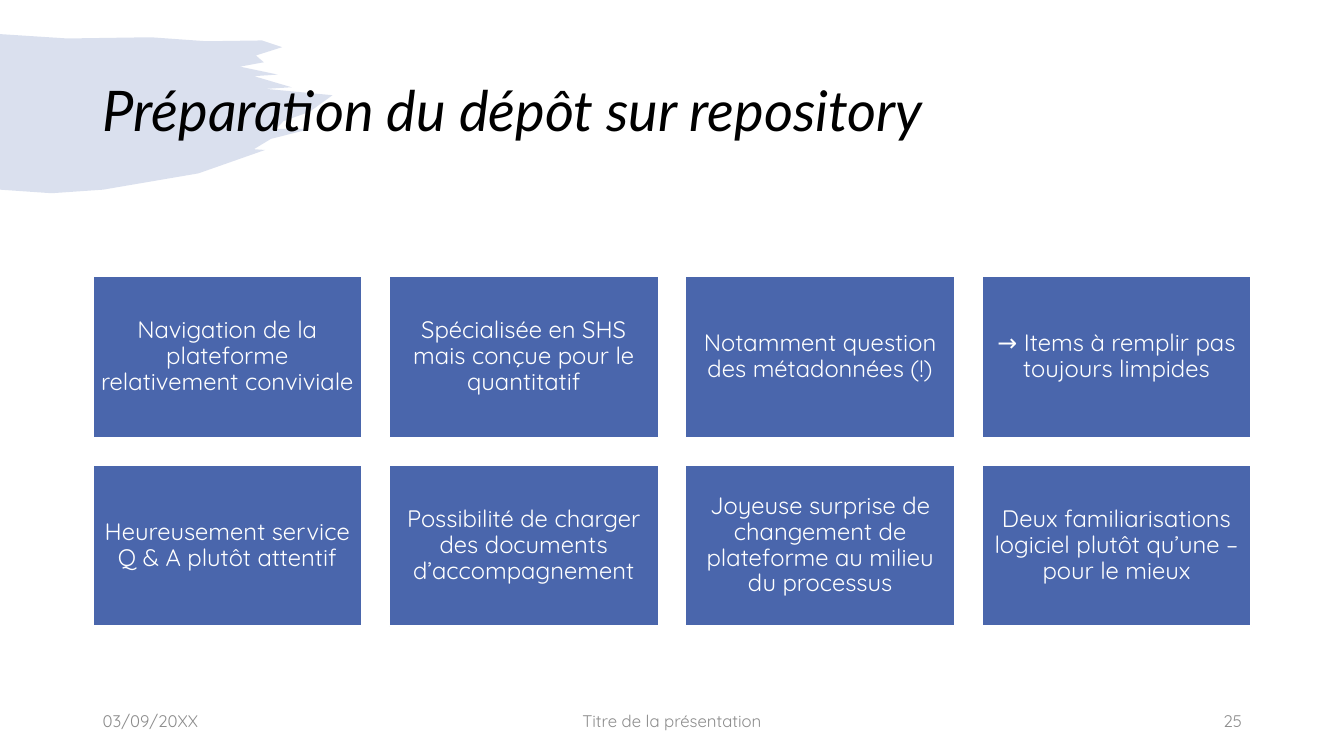
from dataclasses import dataclass
from lxml.etree import SubElement
from pptx import Presentation
from pptx.dml.color import RGBColor
from pptx.enum.shapes import MSO_SHAPE
from pptx.enum.text import MSO_ANCHOR, PP_ALIGN
from pptx.oxml.ns import qn
from pptx.slide import Slide
from pptx.text.text import TextFrame
from pptx.util import Cm, Pt


@dataclass(frozen=True)
class TextStyle:
    font: str
    size: float
    color: RGBColor
    italic: bool = False
    line_spacing: float = 1.0


@dataclass(frozen=True)
class Theme:
    blue: RGBColor = RGBColor.from_string("4A66AC")
    white: RGBColor = RGBColor.from_string("FFFFFF")
    brush_opacity: str = "20%"
    title: TextStyle = TextStyle("Lato", 40, RGBColor.from_string("000000"), True, 0.9)
    card: TextStyle = TextStyle("Quicksand", 17, RGBColor.from_string("FFFFFF"), False, 0.9)
    footer: TextStyle = TextStyle("Quicksand", 12, RGBColor.from_string("8C8C8C"))


@dataclass(frozen=True)
class Label:
    text: str
    left: float
    top: float
    width: float
    height: float
    style: TextStyle
    alignment: PP_ALIGN = PP_ALIGN.LEFT


THEME = Theme()
FOOTER_TOP, FOOTER_HEIGHT = 17.65, 1.02
LABELS = [
    Label("Préparation du dépôt sur repository", 2.34, 1.02, 29.21, 3.68, THEME.title),
    Label("03/09/20XX", 2.34, FOOTER_TOP, 7.62, FOOTER_HEIGHT, THEME.footer),
    Label(
        "Titre de la présentation", 11.22, FOOTER_TOP, 11.43, FOOTER_HEIGHT,
        THEME.footer, PP_ALIGN.CENTER,
    ),
    Label("25", 23.93, FOOTER_TOP, 7.62, FOOTER_HEIGHT, THEME.footer, PP_ALIGN.RIGHT),
]
CARDS = [
    "Navigation de la plateforme relativement conviviale",
    "Spécialisée en SHS mais conçue pour le quantitatif",
    "Notamment question des métadonnées (!)",
    "→ Items à remplir pas toujours limpides",
    "Heureusement service Q & A plutôt attentif",
    "Possibilité de charger des documents d’accompagnement",
    "Joyeuse surprise de changement de plateforme au milieu du processus",
    "Deux familiarisations logiciel plutôt qu’une – pour le mieux",
]
CARD_COLUMNS = 4
CARD_LEFT, CARD_TOP = 2.34, 6.96
CARD_WIDTH, CARD_HEIGHT = 6.78, 4.06
CARD_STEP_X, CARD_STEP_Y = 7.47, 4.76
CARD_MARGIN = 0.18

BRUSH_OUTLINE = [
    (0, 0.86), (1.7, 0.97), (3.8, 0.94), (5.2, 1.04), (6.6, 1.02), (7.11, 1.19),
    (6.45, 1.4), (6.65, 1.57), (6.05, 1.68), (7, 1.88), (6.4, 1.92), (7.35, 2.2),
    (6.7, 2.24), (8.38, 2.4), (7.8, 2.82), (7.15, 3.05), (6.96, 3.25), (7.82, 3.25),
    (6.83, 3.5), (6.4, 3.76), (6.68, 3.78), (5, 4.37), (2.6, 4.78), (1.3, 4.87), (0, 4.78),
]


def draw_brush(slide: Slide) -> None:
    points = [(Cm(x), Cm(y)) for x, y in BRUSH_OUTLINE]
    builder = slide.shapes.build_freeform(*points[0], scale=1.0)
    builder.add_line_segments(points[1:], close=True)
    shape = builder.convert_to_shape()
    shape.shadow.inherit = False
    shape.line.fill.background()
    shape.fill.solid()
    shape.fill.fore_color.rgb = THEME.blue
    color = next(shape.element.spPr.iter(qn("a:srgbClr")))
    SubElement(color, qn("a:alpha"), val=THEME.brush_opacity.replace("%", "000"))


def write_text(text_frame: TextFrame, text: str, style: TextStyle, alignment: PP_ALIGN) -> None:
    text_frame.text = text
    text_frame.word_wrap = True
    text_frame.vertical_anchor = MSO_ANCHOR.MIDDLE
    paragraph = text_frame.paragraphs[0]
    paragraph.alignment = alignment
    paragraph.line_spacing = style.line_spacing
    font = paragraph.runs[0].font
    font.name = style.font
    font.size = Pt(style.size)
    font.italic = style.italic
    font.color.rgb = style.color


def draw_label(slide: Slide, label: Label) -> None:
    shape = slide.shapes.add_textbox(
        Cm(label.left), Cm(label.top), Cm(label.width), Cm(label.height)
    )
    write_text(shape.text_frame, label.text, label.style, label.alignment)


def draw_card(slide: Slide, index: int, text: str) -> None:
    row, column = divmod(index, CARD_COLUMNS)
    shape = slide.shapes.add_shape(
        MSO_SHAPE.RECTANGLE,
        Cm(CARD_LEFT + column * CARD_STEP_X),
        Cm(CARD_TOP + row * CARD_STEP_Y),
        Cm(CARD_WIDTH),
        Cm(CARD_HEIGHT),
    )
    shape.shadow.inherit = False
    shape.fill.solid()
    shape.fill.fore_color.rgb = THEME.blue
    shape.line.color.rgb = THEME.white
    shape.line.width = Pt(1)
    text_frame = shape.text_frame
    text_frame.margin_left = text_frame.margin_right = Cm(CARD_MARGIN)
    text_frame.margin_top = text_frame.margin_bottom = Cm(CARD_MARGIN)
    write_text(text_frame, text, THEME.card, PP_ALIGN.CENTER)


def main() -> None:
    presentation = Presentation()
    presentation.slide_width = Cm(33.87)
    presentation.slide_height = Cm(19.05)
    slide = presentation.slides.add_slide(presentation.slide_layouts[6])
    draw_brush(slide)
    for label in LABELS:
        draw_label(slide, label)
    for index, text in enumerate(CARDS):
        draw_card(slide, index, text)
    presentation.save("out.pptx")


if __name__ == "__main__":
    main()
